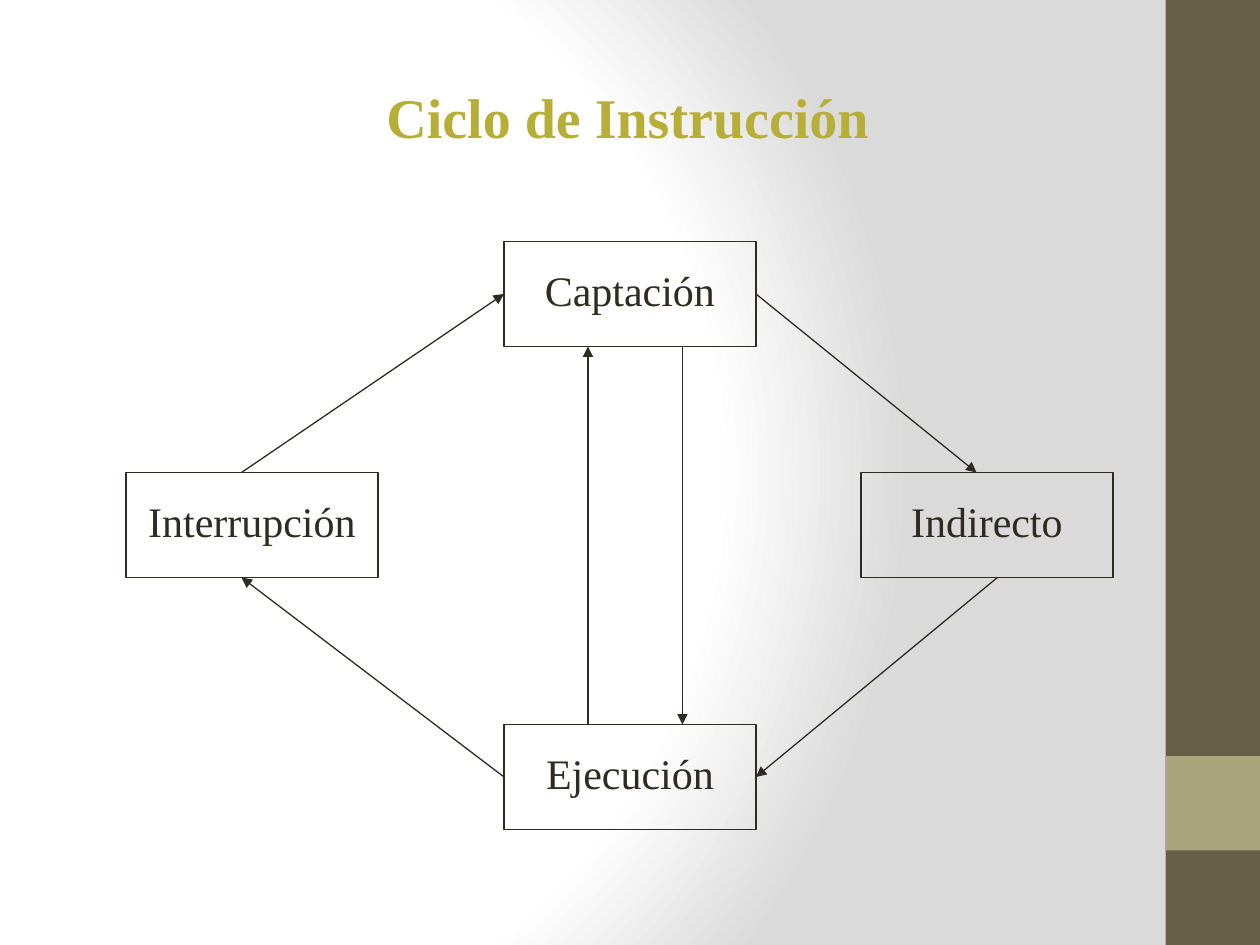
from typing import NamedTuple

from lxml import etree
from pptx import Presentation
from pptx.dml.color import RGBColor
from pptx.enum.shapes import MSO_CONNECTOR, MSO_SHAPE
from pptx.enum.text import MSO_ANCHOR, MSO_AUTO_SIZE, PP_ALIGN
from pptx.oxml import parse_xml
from pptx.oxml.ns import nsdecls, qn
from pptx.util import Inches, Pt

RECT = MSO_SHAPE.RECTANGLE
STRAIGHT = MSO_CONNECTOR.STRAIGHT
MIDDLE = MSO_ANCHOR.MIDDLE
CENTER = PP_ALIGN.CENTER
NO_AUTOFIT = MSO_AUTO_SIZE.NONE

INK = RGBColor(0x2F, 0x2B, 0x20)
TITLE_GOLD = RGBColor(0xB7, 0xAE, 0x38)
BAR_BROWN = RGBColor(0x67, 0x5E, 0x47)
BAR_SAGE = RGBColor(0xA9, 0xA5, 0x7C)
BG_STOPS = {0: "FFFFFF", 75: "FFFFFF", 100: "DADADA"}

FONT = "Times New Roman"
LABEL_FONT = {"name": FONT, "size": Pt(24), "bold": False}
TITLE_FONT = {"name": FONT, "size": Pt(32), "bold": True}
FRAME = {"word_wrap": False, "auto_size": NO_AUTOFIT, "vertical_anchor": MIDDLE}
LABEL_FRAME = {**FRAME, "margin_top": Inches(0.05), "margin_bottom": Inches(0.12)}

COLS, ROWS = 120, 90
CELL = Inches(10) // COLS
BOX_W, BOX_H = 24, 10


class Bar(NamedTuple):
    row: int
    height: int
    color: RGBColor


class Stage(NamedTuple):
    label: str
    col: int
    row: int


class Arrow(NamedTuple):
    col1: int
    row1: int
    col2: int
    row2: int


BARS = [Bar(0, ROWS, BAR_BROWN), Bar(72, 9, BAR_SAGE)]
STAGES = [
    Stage("Interrupción", 12, 45),
    Stage("Ejecución", 48, 69),
    Stage("Captación", 48, 23),
    Stage("Indirecto", 82, 45),
]
ARROWS = [
    Arrow(56, 69, 56, 33),
    Arrow(65, 33, 65, 69),
    Arrow(23, 45, 48, 28),
    Arrow(48, 74, 23, 55),
    Arrow(72, 28, 93, 45),
    Arrow(95, 55, 72, 74),
]


def cells(*counts: float) -> list[int]:
    return [round(n * CELL) for n in counts]


def set_all(target, values: dict) -> None:
    for name, value in values.items():
        setattr(target, name, value)


def write(tf, text: str, frame: dict, font: dict, color: RGBColor) -> None:
    set_all(tf, frame)
    p = tf.paragraphs[0]
    p.alignment = CENTER
    r = p.add_run()
    r.text = text
    set_all(r.font, font)
    r.font.color.rgb = color


def paint_background(s) -> None:
    s.background.fill.solid()
    bg = s._element.find(".//" + qn("p:bgPr"))
    stops = "".join(
        f'<a:gs pos="{pos * 1000}"><a:srgbClr val="{color}"/></a:gs>'
        for pos, color in BG_STOPS.items()
    )
    bg.replace(bg[0], parse_xml(
        f'<a:gradFill {nsdecls("a")} rotWithShape="1"><a:gsLst>{stops}</a:gsLst>'
        '<a:path path="circle"><a:fillToRect l="20000" t="50000" r="100000" b="50000"/>'
        "</a:path></a:gradFill>"
    ))


def draw_bar(s, bar: Bar) -> None:
    sp = s.shapes.add_shape(RECT, *cells(111, bar.row, 9, bar.height))
    sp.shadow.inherit = False
    sp.fill.solid()
    sp.fill.fore_color.rgb = bar.color
    sp.line.fill.background()


def draw_stage(s, stage: Stage) -> None:
    sp = s.shapes.add_shape(RECT, *cells(stage.col, stage.row, BOX_W, BOX_H))
    sp.shadow.inherit = False
    sp.fill.background()
    sp.line.color.rgb = INK
    sp.line.width = Pt(0.75)
    write(sp.text_frame, stage.label, LABEL_FRAME, LABEL_FONT, INK)


def draw_arrow(s, arrow: Arrow) -> None:
    cxn = s.shapes.add_connector(STRAIGHT, *cells(*arrow))
    cxn.line.color.rgb = INK
    cxn.line.width = Pt(0.75)
    etree.SubElement(cxn.line._get_or_add_ln(), qn("a:tailEnd"), type="triangle")
    etree.SubElement(cxn._element.spPr, qn("a:effectLst"))


def draw_title(s, text: str) -> None:
    sp = s.shapes.title
    box = cells(35.4, 7.2, 48.8, 7.7)
    set_all(sp, dict(zip(("left", "top", "width", "height"), box)))
    write(sp.text_frame, text, FRAME, TITLE_FONT, TITLE_GOLD)


def main() -> None:
    prs = Presentation()
    prs.slide_width, prs.slide_height = cells(COLS, ROWS)
    s = prs.slides.add_slide(prs.slide_layouts[5])
    paint_background(s)
    for bar in BARS:
        draw_bar(s, bar)
    for stage in STAGES:
        draw_stage(s, stage)
    for arrow in ARROWS:
        draw_arrow(s, arrow)
    draw_title(s, "Ciclo de Instrucción")
    prs.save("out.pptx")


if __name__ == "__main__":
    main()
